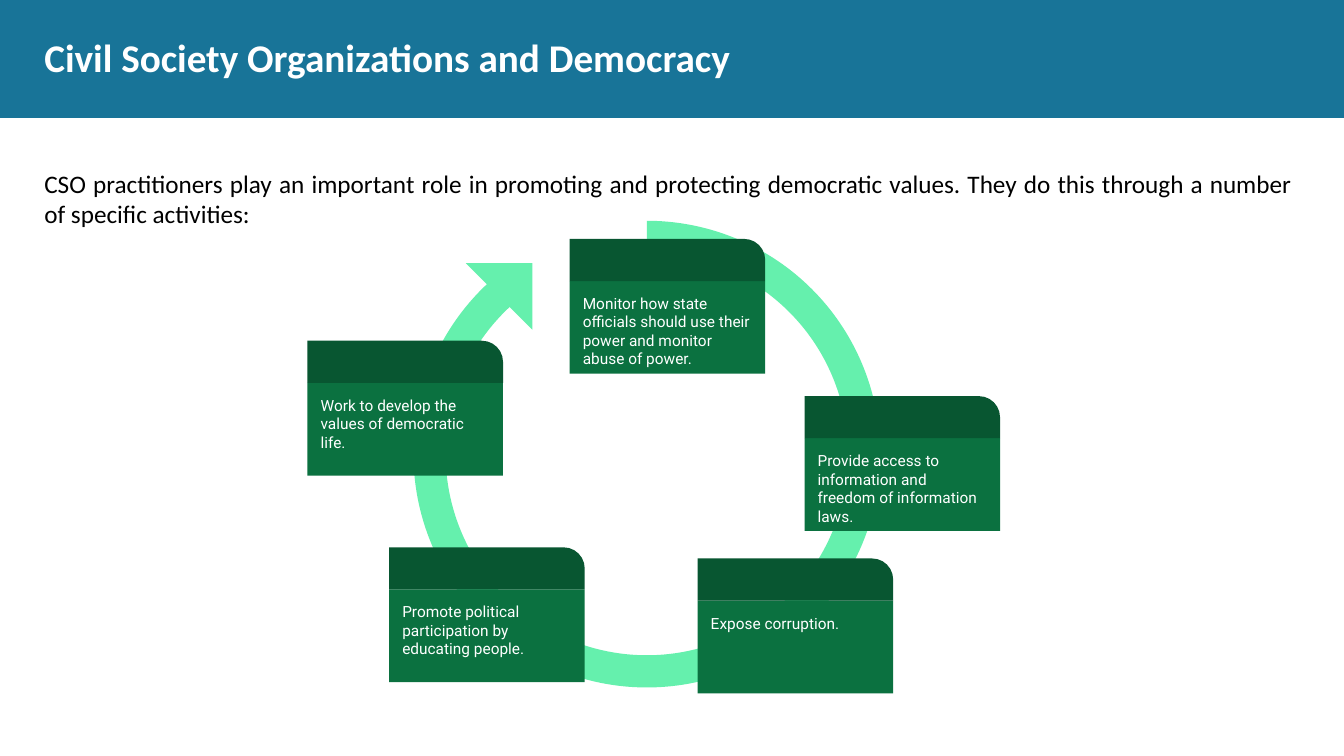
"""Build the slide on civil society organizations and democracy."""
import dataclasses

import pptx
import pptx.dml.color
import pptx.enum.shapes
import pptx.enum.text
import pptx.util

SHAPE = pptx.enum.shapes.MSO_SHAPE
ALIGN = pptx.enum.text.PP_ALIGN
ANCHOR = pptx.enum.text.MSO_ANCHOR


@dataclasses.dataclass(frozen=True)
class Theme:
    """Colours, fonts and type sizes of the slide."""
    banner: str = "187498"
    cycle: str = "65F0AD"
    card_header: str = "085631"
    card_body: str = "0B7140"
    light: str = "FFFFFF"
    dark: str = "000000"
    heading_font: str = "Calibri"
    card_font: str = "Roboto"
    title_size: int = 28
    intro_size: int = 18
    card_size: int = 11


def color(value):
    """Turn a hex value into an RGB colour."""
    return pptx.dml.color.RGBColor.from_string(value)


def write(shape, words, *, font, size, ink, bold=False, align=ALIGN.LEFT,
          anchor=ANCHOR.TOP, inset=0):
    """Put formatted words into a shape."""
    frame = shape.text_frame
    frame.word_wrap = True
    frame.auto_size = pptx.enum.text.MSO_AUTO_SIZE.NONE
    frame.vertical_anchor = anchor
    frame.margin_left = frame.margin_right = pptx.util.Inches(inset)
    frame.margin_top = frame.margin_bottom = pptx.util.Inches(inset)
    paragraph = frame.paragraphs[0]
    paragraph.alignment = align
    run = paragraph.add_run()
    run.text = words
    run.font.name = font
    run.font.size = pptx.util.Pt(size)
    run.font.bold = bold
    run.font.color.rgb = color(ink)


class Deck:
    """Holds the theme and current slide; lengths are percent of its size."""

    CARD_WIDTH = 14.55
    HEADER_HEIGHT = 5.57
    BODY_HEIGHT = 12.27

    def __init__(self, theme):
        """Open a wide presentation with one title-only slide."""
        self.theme = theme
        self.presentation = pptx.Presentation()
        self.presentation.slide_width = pptx.util.Inches(13.33)
        self.presentation.slide_height = pptx.util.Inches(7.5)
        layout = self.presentation.slide_layouts[5]
        self.slide = self.presentation.slides.add_slide(layout)

    def box(self, left, top, width, height):
        """Convert percentages to slide lengths."""
        across = self.presentation.slide_width / 100
        down = self.presentation.slide_height / 100
        return (round(left * across), round(top * down),
                round(width * across), round(height * down))

    def solid(self, home, kind, place, fill, adjustments=(), rotation=0):
        """Add a flat shape without outline or shadow."""
        shape = home.shapes.add_shape(kind, *self.box(*place))
        shape.shadow.inherit = False
        shape.fill.solid()
        shape.fill.fore_color.rgb = color(fill)
        shape.line.fill.background()
        shape.rotation = rotation
        for index, value in enumerate(adjustments):
            shape.adjustments[index] = value
        return shape

    def title(self, words):
        """Add the banner and set the title over it."""
        theme = self.theme
        self.solid(self.slide, SHAPE.RECTANGLE, (0, 0, 100, 15.6), theme.banner)
        heading = self.slide.shapes.title
        heading.element.getparent().append(heading.element)
        heading.left, heading.top, heading.width, heading.height = self.box(
            3.3, 2.53, 93.47, 9.87)
        write(heading, words, font=theme.heading_font, size=theme.title_size,
              ink=theme.light, bold=True, anchor=ANCHOR.MIDDLE)

    def intro(self, words):
        """Add the justified opening text."""
        theme = self.theme
        opening = self.slide.shapes.add_textbox(*self.box(3.3, 22.27, 92.87, 74))
        write(opening, words, font=theme.heading_font, size=theme.intro_size,
              ink=theme.dark, align=ALIGN.JUSTIFY)

    def cycle(self):
        """Add the circular arrow."""
        ring = self.slide.shapes.add_group_shape()
        self.solid(ring, SHAPE.BLOCK_ARC, (30.76, 29.2, 34.73, 61.73),
                   self.theme.cycle, (53.998, 30.127, 0.069), 180)
        self.solid(ring, SHAPE.RIGHT_TRIANGLE, (34.66, 34.8, 4.95, 8.8),
                   self.theme.cycle, rotation=180)

    def card(self, left, top, words):
        """Add an activity card with its rounded header."""
        theme = self.theme
        activity = self.slide.shapes.add_group_shape()
        body = self.solid(
            activity, SHAPE.RECTANGLE,
            (left, top + self.HEADER_HEIGHT, self.CARD_WIDTH, self.BODY_HEIGHT),
            theme.card_body)
        write(body, words, font=theme.card_font, size=theme.card_size,
              ink=theme.light, inset=0.13)
        self.solid(activity, SHAPE.ROUND_1_RECTANGLE,
                   (left, top, self.CARD_WIDTH, self.HEADER_HEIGHT),
                   theme.card_header, (0.5,))


ACTIVITIES = (
    (42.39, 31.6, "Monitor how state officials should use their power and "
                  "monitor abuse of power."),
    (22.88, 45.07, "Work to develop the values of democratic life."),
    (51.91, 73.87, "Expose corruption."),
    (28.96, 72.4, "Promote political participation by educating people."),
    (59.86, 52.4, "Provide access to information and freedom of information "
                  "laws."),
)


def main():
    """Compose and save the slide."""
    deck = Deck(Theme())
    deck.title("Civil Society Organizations and Democracy")
    deck.intro("CSO practitioners play an important role in promoting and "
               "protecting democratic values. They do this through a number "
               "of specific activities:")
    deck.cycle()
    for left, top, words in ACTIVITIES:
        deck.card(left, top, words)
    deck.presentation.save("out.pptx")


if __name__ == "__main__":
    main()
